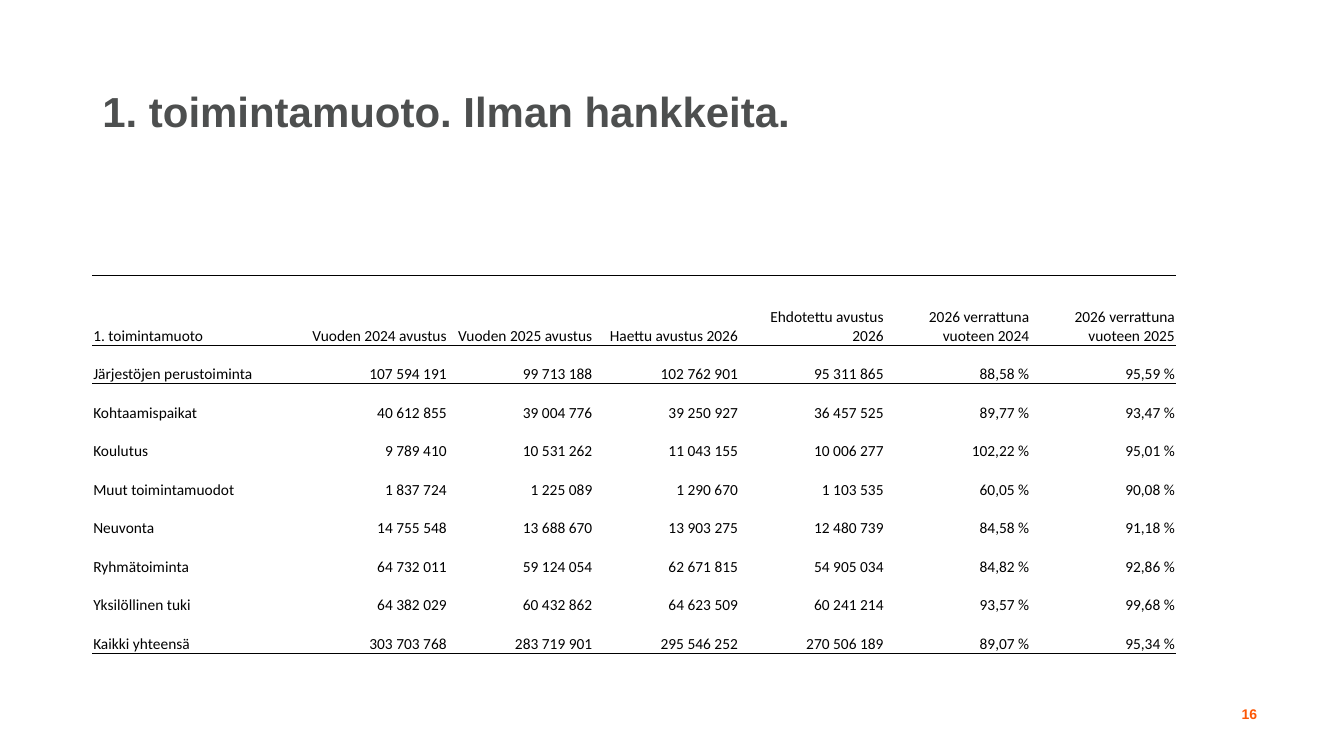
from dataclasses import dataclass

from lxml.etree import SubElement
from pptx import Presentation
from pptx.dml.color import RGBColor
from pptx.enum.text import MSO_ANCHOR, PP_ALIGN
from pptx.oxml.ns import qn
from pptx.slide import Slide
from pptx.table import Table, _Cell
from pptx.text.text import _Paragraph
from pptx.util import Cm, Pt

NO_STYLE_NO_GRID = "{2D5ABB26-0587-4C30-8999-92F81FD0307C}"
BLACK = "000000"
TITLE_FORMAT = {"name": "Arial", "size": Pt(30), "bold": True}
NUMBER_FORMAT = {"name": "Arial", "size": Pt(10), "bold": True}
CELL_FORMAT = {"name": "Calibri", "size": Pt(11), "bold": False}
CELL_LAYOUT = {
    "margin_left": Cm(0.02),
    "margin_right": Cm(0.02),
    "margin_top": Cm(0.02),
    "margin_bottom": Cm(0),
    "vertical_anchor": MSO_ANCHOR.BOTTOM,
}
TABLE_FLAGS = {"first_row": False, "horz_banding": False}
LABEL_WIDTH, VALUE_WIDTH = 5.28, 3.67
HEADER_HEIGHT, ROW_HEIGHT = 1.77, 0.97

GRANTS = [
    ["1. toimintamuoto", "Vuoden 2024 avustus", "Vuoden 2025 avustus", "Haettu avustus 2026",
     "Ehdotettu avustus 2026", "2026 verrattuna vuoteen 2024", "2026 verrattuna vuoteen 2025"],
    ["Järjestöjen perustoiminta", "107 594 191", "99 713 188", "102 762 901", "95 311 865", "88,58 %", "95,59 %"],
    ["Kohtaamispaikat", "40 612 855", "39 004 776", "39 250 927", "36 457 525", "89,77 %", "93,47 %"],
    ["Koulutus", "9 789 410", "10 531 262", "11 043 155", "10 006 277", "102,22 %", "95,01 %"],
    ["Muut toimintamuodot", "1 837 724", "1 225 089", "1 290 670", "1 103 535", "60,05 %", "90,08 %"],
    ["Neuvonta", "14 755 548", "13 688 670", "13 903 275", "12 480 739", "84,58 %", "91,18 %"],
    ["Ryhmätoiminta", "64 732 011", "59 124 054", "62 671 815", "54 905 034", "84,82 %", "92,86 %"],
    ["Yksilöllinen tuki", "64 382 029", "60 432 862", "64 623 509", "60 241 214", "93,57 %", "99,68 %"],
    ["Kaikki yhteensä", "303 703 768", "283 719 901", "295 546 252", "270 506 189", "89,07 %", "95,34 %"],
]


@dataclass
class Label:
    text: str
    left: float
    top: float
    width: float
    height: float
    style: dict
    color: str
    align: PP_ALIGN
    anchor: MSO_ANCHOR
    line_spacing: float


LABELS = [
    Label("1. toimintamuoto. Ilman hankkeita.", 2.33, 1.02, 22.83, 3.68,
          TITLE_FORMAT, "4D4F4F", PP_ALIGN.LEFT, MSO_ANCHOR.MIDDLE, 0.9),
    Label("16", 29.7, 17.65, 2.23, 1.02,
          NUMBER_FORMAT, "FD5705", PP_ALIGN.RIGHT, MSO_ANCHOR.TOP, 1.0),
]


def rgb(value: str) -> RGBColor:
    return RGBColor.from_string(value)


def apply(target: object, values: dict) -> None:
    for name, value in values.items():
        setattr(target, name, value)


def write(para: _Paragraph, text: str, style: dict, color: str, align: PP_ALIGN) -> None:
    para.alignment = align
    span = para.add_run()
    span.text = text
    apply(span.font, style)
    span.font.color.rgb = rgb(color)


def add_label(page: Slide, label: Label) -> None:
    box = page.shapes.add_textbox(Cm(label.left), Cm(label.top), Cm(label.width), Cm(label.height))
    frame = box.text_frame
    apply(frame, {"word_wrap": True, "vertical_anchor": label.anchor})
    para = frame.paragraphs[0]
    para.line_spacing = label.line_spacing
    write(para, label.text, label.style, label.color, label.align)


def add_border(cell: _Cell, side: str) -> None:
    properties = cell._tc.get_or_add_tcPr()
    line = SubElement(properties, qn(f"a:{side}"), w=str(Pt(0.5)))
    fill = SubElement(line, qn("a:solidFill"))
    SubElement(fill, qn("a:srgbClr"), val=BLACK)


def fill_cell(cell: _Cell, text: str, align: PP_ALIGN, sides: list[str]) -> None:
    apply(cell, CELL_LAYOUT)
    for side in sides:
        add_border(cell, side)
    cell.fill.background()
    write(cell.text_frame.paragraphs[0], text, CELL_FORMAT, BLACK, align)


def border_sides(row: int) -> list[str]:
    top = ["lnT"] if row in (0, 1) else []
    bottom = ["lnB"] if row in (0, len(GRANTS) - 1) else []
    return top + bottom


def add_grant_table(page: Slide) -> Table:
    row_count, column_count = len(GRANTS), len(GRANTS[0])
    width = LABEL_WIDTH + VALUE_WIDTH * (column_count - 1)
    height = HEADER_HEIGHT + ROW_HEIGHT * (row_count - 1)
    frame = page.shapes.add_table(row_count, column_count, Cm(2.33), Cm(6.93), Cm(width), Cm(height))
    table = frame.table
    apply(table, TABLE_FLAGS)
    table._tbl.tblPr.find(qn("a:tableStyleId")).text = NO_STYLE_NO_GRID
    for index, column in enumerate(table.columns):
        column.width = Cm(VALUE_WIDTH if index else LABEL_WIDTH)
    for index, row in enumerate(table.rows):
        row.height = Cm(ROW_HEIGHT if index else HEADER_HEIGHT)
        for position, text in enumerate(GRANTS[index]):
            align = PP_ALIGN.RIGHT if position else PP_ALIGN.LEFT
            fill_cell(table.cell(index, position), text, align, border_sides(index))
    return table


def main() -> None:
    deck = Presentation()
    apply(deck, {"slide_width": Cm(33.87), "slide_height": Cm(19.05)})
    page = deck.slides.add_slide(deck.slide_layouts[6])
    for label in LABELS:
        add_label(page, label)
    add_grant_table(page)
    deck.save("out.pptx")


if __name__ == "__main__":
    main()
